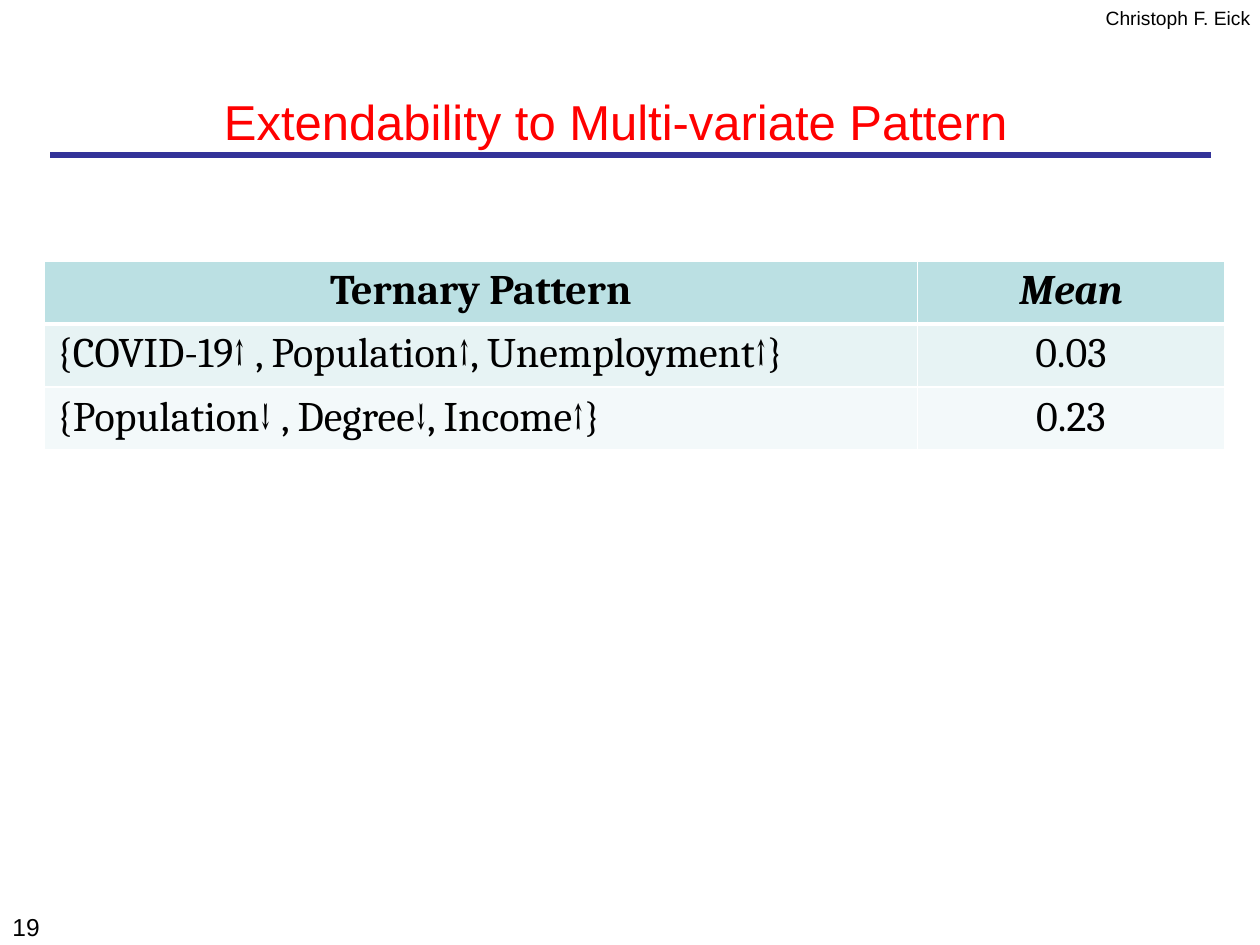
from dataclasses import dataclass

from lxml import etree
from pptx import Presentation
from pptx.dml.color import RGBColor
from pptx.enum.shapes import MSO_CONNECTOR
from pptx.enum.text import PP_ALIGN
from pptx.oxml.ns import qn
from pptx.util import Inches, Pt

LEFT, CENTER, JUSTIFY = PP_ALIGN.LEFT, PP_ALIGN.CENTER, PP_ALIGN.JUSTIFY
STRAIGHT = MSO_CONNECTOR.STRAIGHT


@dataclass(frozen=True)
class Theme:
    sans: str = "Arial"
    serif: str = "Cambria"
    ink: str = "000000"
    title: str = "FF0000"
    rule: str = "333399"
    border: str = "FFFFFF"
    row_fills: tuple = ("BBE0E3", "E7F3F4", "F3F9FA")
    title_size: int = 28
    table_size: int = 24
    number_size: int = 14
    author_size: int = 11


THEME = Theme()


def write_text(frame, text, size, font=THEME.sans, color=THEME.ink,
               align=LEFT, bold=False, italic=False):
    paragraph = frame.paragraphs[0]
    paragraph.alignment = align
    run = paragraph.add_run()
    run.text = text
    run.font.name = font
    run.font.size = Pt(size)
    run.font.bold = bold
    run.font.italic = italic
    run.font.color.rgb = RGBColor.from_string(color)


def add_label(slide, box, text, size, wrap=True, **text_format):
    frame = slide.shapes.add_textbox(*map(Inches, box)).text_frame
    frame.word_wrap = wrap
    write_text(frame, text, size, **text_format)


def add_rule(slide, left, right, y):
    rule = slide.shapes.add_connector(
        STRAIGHT, Inches(left), Inches(y), Inches(right), Inches(y))
    rule.line.color.rgb = RGBColor.from_string(THEME.rule)
    rule.line.width = Pt(3)
    etree.SubElement(rule._element.spPr, qn("a:effectLst"))


def set_borders(cell, **widths):
    """Draw the cell's edges; the fill must be set afterwards to follow them."""
    properties = cell._tc.get_or_add_tcPr()
    for edge, width in widths.items():
        line = etree.SubElement(properties, qn(f"a:ln{edge}"), w=str(Pt(width)))
        fill = etree.SubElement(line, qn("a:solidFill"))
        etree.SubElement(fill, qn("a:srgbClr"), val=THEME.border)


def add_pattern_table(slide, box, rows, column_widths):
    table = slide.shapes.add_table(
        len(rows), len(column_widths), *map(Inches, box)).table
    for column, width in zip(table.columns, column_widths):
        column.width = Inches(width)
    for r, values in enumerate(rows):
        header = r == 0
        for c, value in enumerate(values):
            cell = table.cell(r, c)
            set_borders(cell, L=1, R=1, T=3 if r == 1 else 1,
                        B=3 if header else 1)
            cell.fill.solid()
            cell.fill.fore_color.rgb = RGBColor.from_string(THEME.row_fills[r])
            write_text(cell.text_frame, value, THEME.table_size,
                       font=THEME.serif, bold=header,
                       italic=header and c == 1,
                       align=CENTER if header or c == 1 else JUSTIFY)


def add_header(slide, box):
    left, top, width, height = box
    add_rule(slide, left + 0.16, left + 9.37, top + 0.55)
    add_label(slide, (8.66, 0, 1.38, 0.29), "Christoph F. Eick",
              THEME.author_size, wrap=False, align=CENTER)
    add_label(slide, box, "Extendability to Multi-variate Pattern",
              THEME.title_size, color=THEME.title, align=CENTER)


def main():
    deck = Presentation()
    deck.slide_width, deck.slide_height = Inches(10), Inches(7.5)
    slide = deck.slides.add_slide(deck.slide_layouts[6])
    add_header(slide, (0.24, 0.68, 9.29, 0.71))
    add_pattern_table(
        slide, (0.35, 2.07, 9.37, 1.5),
        [("Ternary Pattern", "Mean"),
         ("{COVID-19↑ , Population↑, Unemployment↑}", "0.03"),
         ("{Population↓ , Degree↓, Income↑}", "0.23")],
        column_widths=(6.93, 2.44))
    add_label(slide, (0, 7.19, 0.48, 0.31), "19", THEME.number_size)
    deck.save("out.pptx")


if __name__ == "__main__":
    main()
